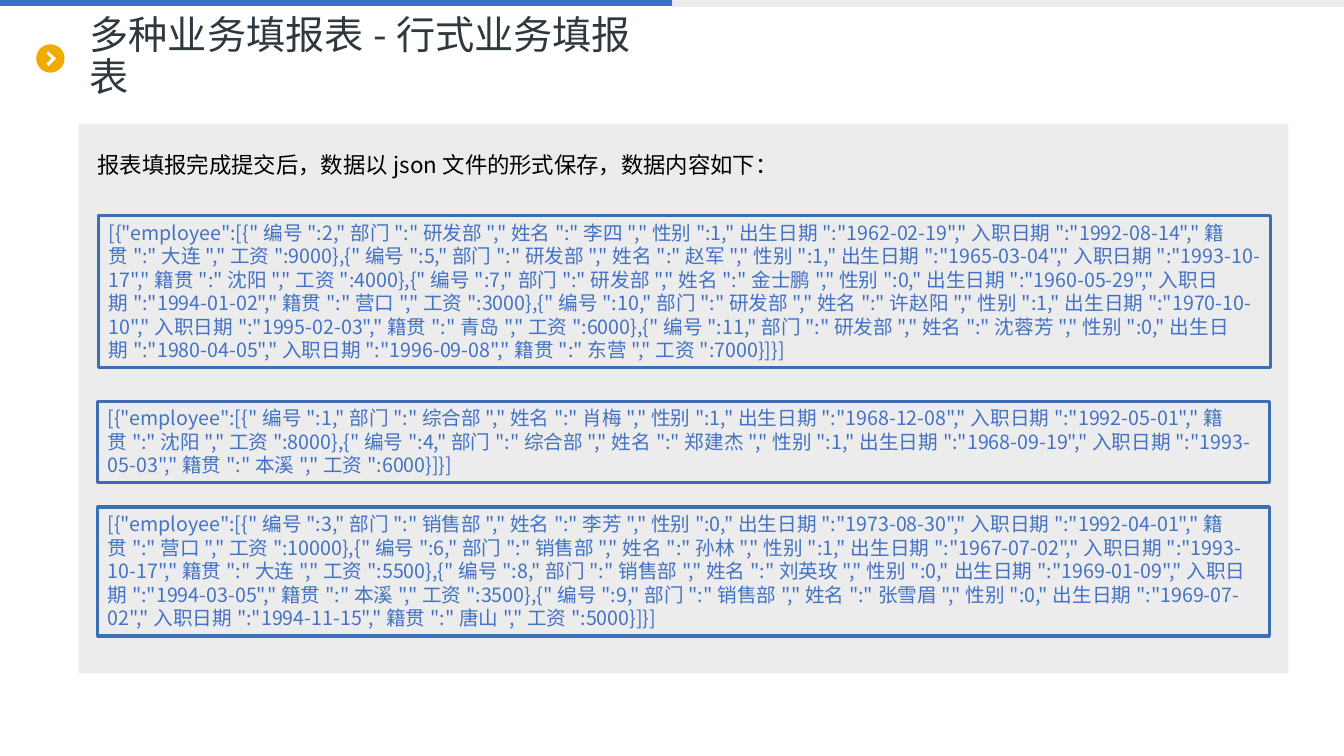
"""Build the slide on row-style business report forms and their saved JSON data."""
import math

import pptx
import pptx.dml.color
import pptx.enum.shapes
import pptx.enum.text
import pptx.oxml
import pptx.oxml.ns
import pptx.util

TITLE = "多种业务填报表-行式业务填报表"
INTRO = "报表填报完成提交后，数据以json文件的形式保存，数据内容如下："
FIELDS = ("编号", "部门", "姓名", "性别", "出生日期", "入职日期", "籍贯", "工资")
DEPARTMENTS = [
    {"name": "研发部", "box": (0.98, 2.14, 11.62, 1.51), "staff": [
        (2, "李四", 1, "1962-02-19", "1992-08-14", "大连", 9000),
        (5, "赵军", 1, "1965-03-04", "1993-10-17", "沈阳", 4000),
        (7, "金士鹏", 0, "1960-05-29", "1994-01-02", "营口", 3000),
        (10, "许赵阳", 1, "1970-10-10", "1995-02-03", "青岛", 6000),
        (11, "沈蓉芳", 0, "1980-04-05", "1996-09-08", "东营", 7000)]},
    {"name": "综合部", "box": (0.97, 3.98, 11.62, 0.81), "staff": [
        (1, "肖梅", 1, "1968-12-08", "1992-05-01", "沈阳", 8000),
        (4, "郑建杰", 1, "1968-09-19", "1993-05-03", "本溪", 6000)]},
    {"name": "销售部", "box": (0.97, 5.03, 11.62, 1.28), "staff": [
        (3, "李芳", 0, "1973-08-30", "1992-04-01", "营口", 10000),
        (6, "孙林", 1, "1967-07-02", "1993-10-17", "大连", 5500),
        (8, "刘英玫", 0, "1969-01-09", "1994-03-05", "本溪", 3500),
        (9, "张雪眉", 0, "1969-07-02", "1994-11-15", "唐山", 5000)]},
]
PANELS = [
    ((0, 0, 6.67, 0.06), "accent"),
    ((6.67, 0, 6.67, 0.07), "grey"),
    ((0.78, 1.23, 12, 5.45), "grey"),
]
BADGE = {"center": (0.5, 0.58), "radius": 0.14, "steps": 72}
CHEVRON = [(0.46, 0.53), (0.48, 0.51), (0.56, 0.58), (0.48, 0.66), (0.46, 0.63), (0.51, 0.58)]
THEME = {
    "font": "Noto Sans CJK SC",
    "accent": "3B6DCC", "grey": "ECECEC", "badge": "F0AB00", "border": "3B6FB3",
    "border_width": 2.25,
    "title": {"size": 28, "color": "2E383F"},
    "intro": {"size": 16, "color": "000000"},
    "data": {"size": 14, "color": "4472C4"},
}


def rgb(name):
    return pptx.dml.color.RGBColor.from_string(name)


def inches(values):
    return [pptx.util.Inches(v) for v in values]


def as_json(dept):
    records = []
    for number, *rest in dept["staff"]:
        values = (number, dept["name"], *rest)
        pairs = [f'"{k}":"{v}"' if isinstance(v, str) else f'"{k}":{v}'
                 for k, v in zip(FIELDS, values)]
        records.append("{" + ",".join(pairs) + "}")
    return '[{"employee":[' + ",".join(records) + "]}]"


def paint(sp, color):
    sp.shadow.inherit = False
    sp.fill.solid()
    sp.fill.fore_color.rgb = rgb(color)
    sp.line.fill.background()


def add_rect(s, box):
    return s.shapes.add_shape(pptx.enum.shapes.MSO_SHAPE.RECTANGLE, *inches(box))


def write(sp, text, style, spacing=None, **frame):
    tf = sp.text_frame
    settings = {"word_wrap": True, "vertical_anchor": pptx.enum.text.MSO_ANCHOR.TOP, **frame}
    for key, value in settings.items():
        setattr(tf, key, value)
    p = tf.paragraphs[0]
    p.alignment = pptx.enum.text.PP_ALIGN.LEFT
    p.line_spacing = spacing
    r = p.add_run()
    r.text = text
    for key, value in {"name": THEME["font"], "size": pptx.util.Pt(style["size"])}.items():
        setattr(r.font, key, value)
    r.font.color.rgb = rgb(style["color"])
    ea = pptx.oxml.parse_xml(f'<a:ea {pptx.oxml.ns.nsdecls("a")} typeface="{THEME["font"]}"/>')
    r.font._element.append(ea)


def add_badge(s):
    cx, cy = BADGE["center"]
    angles = [2 * math.pi * i / BADGE["steps"] for i in range(BADGE["steps"])]
    circle = [(cx + BADGE["radius"] * math.cos(a), cy + BADGE["radius"] * math.sin(a))
              for a in angles]
    ring, hole = ([inches(point) for point in outline] for outline in (circle, CHEVRON))
    builder = s.shapes.build_freeform(*ring[0])
    builder.add_line_segments(ring[1:], close=True)
    builder.move_to(*hole[0])
    builder.add_line_segments(hole[1:], close=True)
    paint(builder.convert_to_shape(), THEME["badge"])


def main():
    prs = pptx.Presentation()
    prs.slide_width, prs.slide_height = inches((13.33, 7.5))
    s = prs.slides.add_slide(prs.slide_layouts[6])
    grow = pptx.enum.text.MSO_AUTO_SIZE.SHAPE_TO_FIT_TEXT

    add_badge(s)
    for box, color in PANELS:
        paint(add_rect(s, box), THEME[color])
    write(s.shapes.add_textbox(*inches((0.79, 0.28, 5.89, 0.59))), TITLE, THEME["title"],
          spacing=0.9, vertical_anchor=pptx.enum.text.MSO_ANCHOR.MIDDLE)
    write(s.shapes.add_textbox(*inches((0.87, 1.45, 11.59, 0.37))), INTRO, THEME["intro"],
          auto_size=grow)
    for dept in DEPARTMENTS:
        sp = add_rect(s, dept["box"])
        sp.shadow.inherit = False
        sp.fill.background()
        sp.line.color.rgb = rgb(THEME["border"])
        sp.line.width = pptx.util.Pt(THEME["border_width"])
        write(sp, as_json(dept), THEME["data"], auto_size=grow)
    prs.save("out.pptx")


if __name__ == "__main__":
    main()
